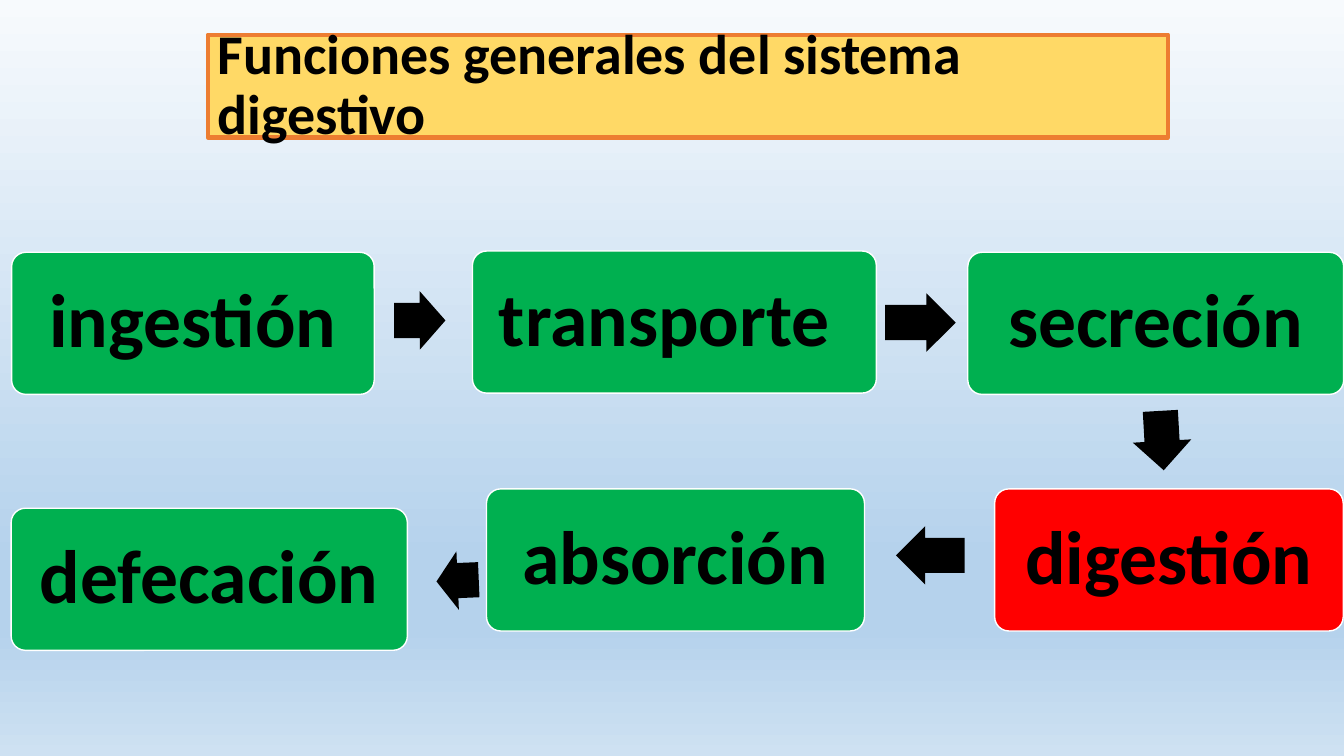
from typing import NamedTuple

from lxml import etree
from pptx import Presentation
from pptx.dml.color import RGBColor
from pptx.enum.shapes import MSO_SHAPE
from pptx.enum.text import MSO_ANCHOR, PP_ALIGN
from pptx.oxml.ns import qn
from pptx.util import Pt

RECT = MSO_SHAPE.RECTANGLE
ROUND = MSO_SHAPE.ROUNDED_RECTANGLE
ARROW = MSO_SHAPE.RIGHT_ARROW
MIDDLE = MSO_ANCHOR.MIDDLE
LEFT = PP_ALIGN.LEFT
CENTER = PP_ALIGN.CENTER

BLACK = "000000"
WHITE = "FFFFFF"
GREEN = "00B050"
RED = "FF0000"
STOPS = [(0, "F7FAFD"), (74, "B5D2EC"), (83, "B5D2EC"), (100, "CEE1F2")]
BOX_H = 101.5
ARROW_H = 41.8


class Step(NamedTuple):
    text: str
    x: float
    y: float
    width: float
    fill: str = GREEN
    align: PP_ALIGN = CENTER


class Arrow(NamedTuple):
    x: float
    y: float
    width: float
    turn: float


STEPS = [
    Step("ingestión", 8.3, 180.2, 259),
    Step("transporte", 337.5, 179.3, 288.5, align=LEFT),
    Step("secreción", 691.3, 180.2, 268.5),
    Step("digestión", 710.5, 349.2, 249),
    Step("absorción", 347.5, 349.2, 270),
    Step("defecación", 8, 363, 283),
]
STEPS[3] = STEPS[3]._replace(fill=RED)
ARROWS = [
    Arrow(281.5, 208, 36.7, 359.9),
    Arrow(632.3, 209.5, 50.4, 0.1),
    Arrow(808.8, 293.8, 42.5, 86.7),
    Arrow(640, 375.8, 49, 180),
    Arrow(311.8, 393.8, 30.2, 177.6),
]


def color(code: str) -> RGBColor:
    return RGBColor.from_string(code)


def assign(target, values: dict) -> None:
    for name, value in values.items():
        setattr(target, name, value)


def add_shape(slide, kind, x: float, y: float, width: float, height: float, fill: str):
    shape = slide.shapes.add_shape(kind, Pt(x), Pt(y), Pt(width), Pt(height))
    shape.shadow.inherit = False
    shape.fill.solid()
    shape.fill.fore_color.rgb = color(fill)
    shape.line.fill.background()
    return shape


def outline(shape, code: str, width: float) -> None:
    shape.line.color.rgb = color(code)
    shape.line.width = Pt(width)


def write(shape, text: str, size: float, align: PP_ALIGN, side: float) -> None:
    frame = shape.text_frame
    assign(frame, {
        "word_wrap": True, "vertical_anchor": MIDDLE,
        "margin_left": Pt(side), "margin_right": Pt(side),
        "margin_top": Pt(3.6), "margin_bottom": Pt(3.6),
    })
    line = frame.paragraphs[0]
    assign(line, {"alignment": align, "line_spacing": 0.9})
    run = line.add_run()
    run.text = text
    assign(run.font, {"name": "Calibri", "size": Pt(size), "bold": True})
    run.font.color.rgb = color(BLACK)


def paint_back(slide) -> None:
    fill = slide.background.fill
    fill.gradient()
    fill.gradient_angle = 270
    stops = slide.element.find(".//" + qn("a:gsLst"))
    for old in list(stops):
        stops.remove(old)
    for spot, code in STOPS:
        stop = etree.SubElement(stops, qn("a:gs"), pos=str(spot * 1000))
        etree.SubElement(stop, qn("a:srgbClr"), val=code)


def draw_title(slide) -> None:
    title = add_shape(slide, RECT, 148.3, 24.8, 686, 73.4, "FFD966")
    outline(title, "ED7D31", 3)
    write(title, "Funciones generales del sistema digestivo", 40, LEFT, 7.2)


def draw_step(slide, step: Step) -> None:
    box = add_shape(slide, ROUND, step.x, step.y, step.width, BOX_H, step.fill)
    box.adjustments[0] = 0.1
    outline(box, WHITE, 1)
    write(box, step.text, 54, step.align, 16)


def draw_arrow(slide, arrow: Arrow) -> None:
    shape = add_shape(slide, ARROW, arrow.x, arrow.y, arrow.width, ARROW_H, BLACK)
    shape.adjustments[0] = 0.6
    shape.adjustments[1] = 0.5
    shape.rotation = arrow.turn


def main() -> None:
    deck = Presentation()
    assign(deck, {"slide_width": Pt(960), "slide_height": Pt(540)})
    slide = deck.slides.add_slide(deck.slide_layouts[6])
    paint_back(slide)
    draw_title(slide)
    for step in STEPS:
        draw_step(slide, step)
    for arrow in ARROWS:
        draw_arrow(slide, arrow)
    deck.save("out.pptx")


if __name__ == "__main__":
    main()
